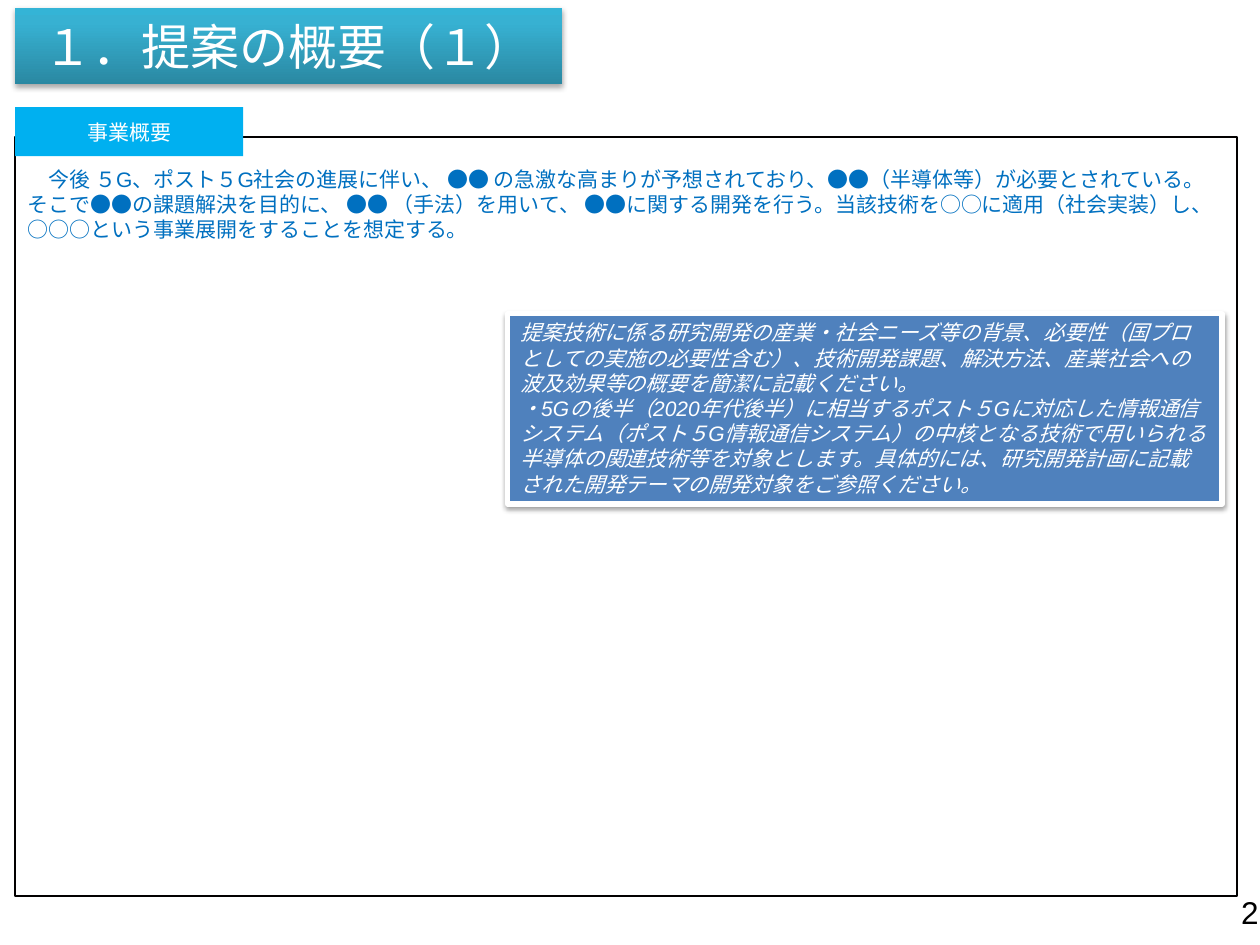
from pptx import Presentation
from pptx.dml.color import RGBColor
from pptx.enum.shapes import MSO_SHAPE as Preset
from pptx.enum.text import MSO_ANCHOR as Anchor, PP_ALIGN as Align
from pptx.oxml import parse_xml
from pptx.oxml.ns import nsdecls
from pptx.util import Inches, Pt

COLORS = {
    "white": "FFFFFF", "black": "000000", "frame": "020000",
    "tab": "00B0F0", "note": "4F81BD", "body": "0070C0",
    "title_dark": "2A88A2", "title_mid": "37B1D2", "title_light": "34B4D6",
}
FONT = "Arial"
CELL = Inches(0.1)  # grid of 100 columns by 75 rows

TITLE = "１．提案の概要（１）"
TAB = "事業概要"
BODY = (
    "\u3000今後 ５G、ポスト５G社会の進展に伴い、 ●● の急激な高まりが予想されており、"
    "●●（半導体等）が必要とされている。そこで●●の課題解決を目的に、 ●● （手法）を用いて、 "
    "●●に関する開発を行う。当該技術を○○に適用（社会実装）し、"
    "○○○という事業展開をすることを想定する。"
).replace("\u3000", "　")
NOTES = [
    "提案技術に係る研究開発の産業・社会ニーズ等の背景、必要性（国プロとしての実施の必要性含む）、"
    "技術開発課題、解決方法、産業社会への波及効果等の概要を簡潔に記載ください。",
    "・5Gの後半（2020年代後半）に相当するポスト５Gに対応した情報通信システム"
    "（ポスト５G情報通信システム）の中核となる技術で用いられる半導体の関連技術等を対象とします。"
    "具体的には、研究開発計画に記載された開発テーマの開発対象をご参照ください。",
]


def color(name):
    return RGBColor.from_string(COLORS[name])


def place(box):
    """Turn (column, row, columns, rows) into lengths."""
    return [round(CELL * value) for value in box]


def add_rectangle(slide, box, fill=None, line=None, width=1):
    shape = slide.shapes.add_shape(Preset.RECTANGLE, *place(box))
    shape.shadow.inherit = False
    if fill:
        shape.fill.solid()
        shape.fill.fore_color.rgb = color(fill)
    else:
        shape.fill.background()
    if line:
        shape.line.color.rgb = color(line)
        shape.line.width = Pt(width)
    else:
        shape.line.fill.background()
    return shape


def write(shape, texts, size, ink, align=Align.LEFT, anchor=Anchor.TOP, italic=False):
    frame = shape.text_frame
    frame.word_wrap = True
    frame.vertical_anchor = anchor
    for index, text in enumerate(texts):
        paragraph = frame.add_paragraph() if index else frame.paragraphs[0]
        paragraph.text = text
        paragraph.alignment = align
        font = paragraph.font
        font.name, font.size, font.italic = FONT, Pt(size), italic
        font.color.rgb = color(ink)
    return frame


def add_shadow(shape, opacity, blur, distance):
    effects = shape._element.spPr.find(
        "{http://schemas.openxmlformats.org/drawingml/2006/main}effectLst")
    effects.append(parse_xml(
        f'<a:outerShdw {nsdecls("a")} blurRad="{Pt(blur)}" dist="{Pt(distance)}" '
        f'dir="5400000" rotWithShape="0"><a:srgbClr val="{COLORS["black"]}">'
        f'<a:alpha val="{opacity * 1000}"/></a:srgbClr></a:outerShdw>'))


def set_gradient(shape, stops):
    """Blend the colours from the bottom edge to the top."""
    shape.fill.gradient()
    gradient = shape._element.spPr.find(
        "{http://schemas.openxmlformats.org/drawingml/2006/main}gradFill")
    stop_list = "".join(
        f'<a:gs pos="{share * 1000}"><a:srgbClr val="{COLORS[name]}"/></a:gs>'
        for share, name in stops)
    gradient.getparent().replace(gradient, parse_xml(
        f'<a:gradFill {nsdecls("a")} rotWithShape="1"><a:gsLst>{stop_list}</a:gsLst>'
        '<a:lin ang="16200000" scaled="0"/></a:gradFill>'))


def add_title(slide, box):
    shape = add_rectangle(slide, box)
    set_gradient(shape, [(0, "title_dark"), (80, "title_mid"), (100, "title_light")])
    add_shadow(shape, 35, 3.1, 1.8)
    write(shape, [TITLE], 28, "white", Align.CENTER, Anchor.MIDDLE)


def add_note(slide, box):
    shape = add_rectangle(slide, box, "note", "white", 3)
    add_shadow(shape, 38, 3.1, 1.6)
    write(shape, NOTES, 12, "white", italic=True)


def add_overview(slide, box):
    left, top, width, height = box
    # Frame, with the heading tab across its top edge
    add_rectangle(slide, box, line="frame")
    tab = add_rectangle(slide, (left, top - 2.4, 18.1, 3.9), "tab")
    write(tab, [TAB], 12, "white", Align.CENTER, Anchor.MIDDLE)
    # Summary text
    summary = slide.shapes.add_textbox(*place((left, top + 1.8, width, 7.1)))
    frame = write(summary, [BODY], 12, "body")
    frame.paragraphs[0].space_before = Pt(6)


def add_page_number(slide, box):
    number = slide.shapes.add_textbox(*place(box))
    frame = write(number, ["2"], 18, "black", Align.RIGHT, Anchor.MIDDLE)
    frame.margin_left = frame.margin_right = frame.margin_top = frame.margin_bottom = 0


def main():
    presentation = Presentation()
    presentation.slide_width, presentation.slide_height = CELL * 100, CELL * 75
    slide = presentation.slides.add_slide(presentation.slide_layouts[6])
    add_title(slide, (1.2, 0.6, 43.4, 6.1))
    add_note(slide, (40.3, 24.9, 56.7, 15.1))
    add_page_number(slide, (94.1, 71.1, 5.8, 2.5))
    add_overview(slide, (1.2, 10.9, 97, 60.2))
    presentation.save("out.pptx")


if __name__ == "__main__":
    main()
